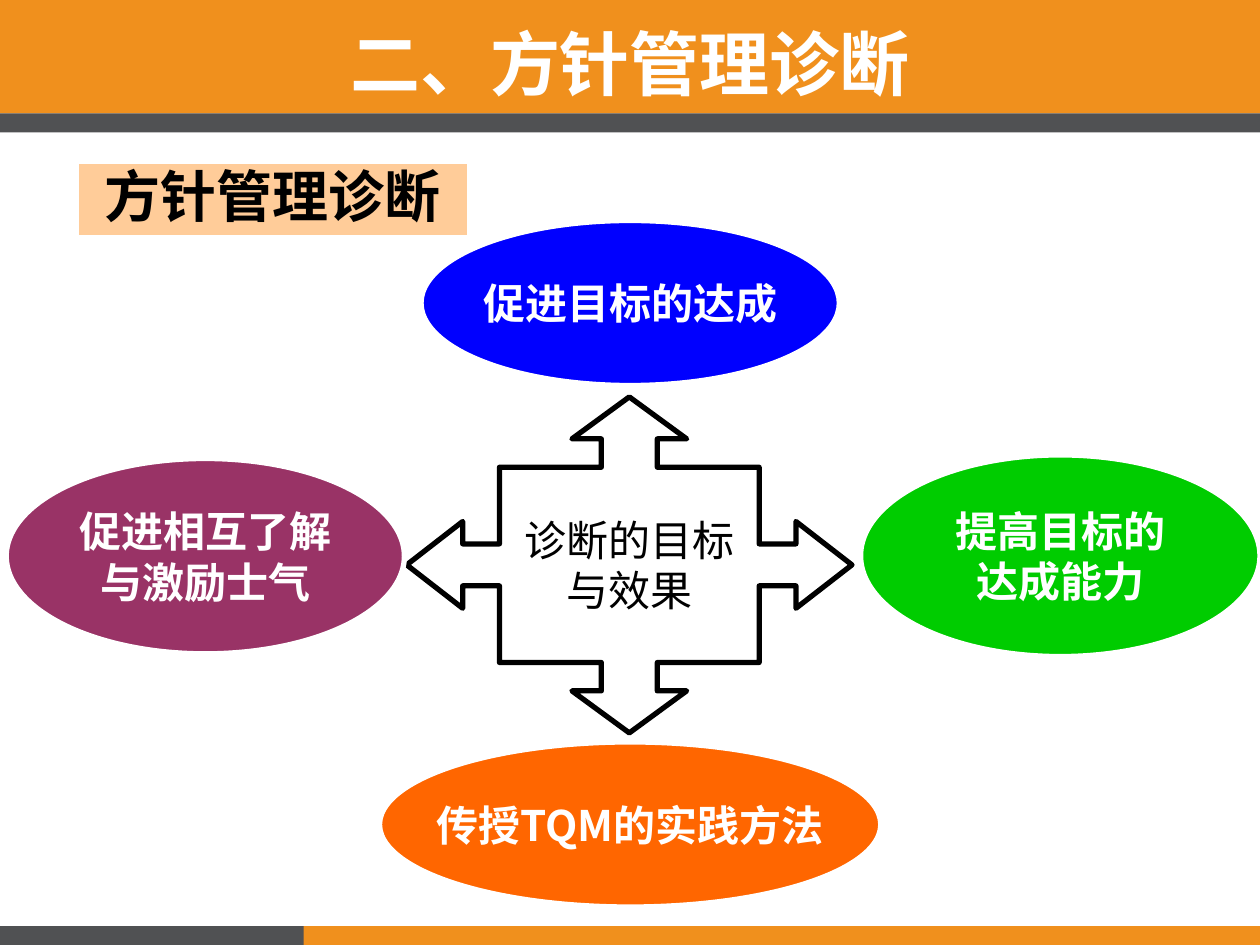
import pptx
import pptx.dml.color
import pptx.enum.shapes
import pptx.enum.text
import pptx.oxml.ns
import pptx.util
from dataclasses import dataclass
from lxml import etree

Pt = pptx.util.Pt
SHAPE = pptx.enum.shapes.MSO_SHAPE
ANCHOR = pptx.enum.text.MSO_ANCHOR
CENTER = pptx.enum.text.PP_ALIGN.CENTER


@dataclass(frozen=True)
class Theme:
    font: str = "Noto Sans CJK SC"
    title: int = 40
    heading: int = 32
    body: int = 24
    white: str = "FFFFFF"
    black: str = "000000"
    orange: str = "F0901D"
    gray: str = "505153"
    peach: str = "FFCC99"
    blue: str = "0000FF"
    green: str = "00CC00"
    flame: str = "FF6600"
    plum: str = "993366"


def rgb(value):
    return pptx.dml.color.RGBColor.from_string(value)


class SlideBuilder:
    def __init__(self, prs, theme):
        self.theme = theme
        self.s = prs.slides.add_slide(prs.slide_layouts[6])

    def paint(self, sp, fill, line=None, width=3):
        sp.shadow.inherit = False
        sp.fill.solid()
        sp.fill.fore_color.rgb = rgb(fill)
        if line:
            sp.line.color.rgb = rgb(line)
            sp.line.width = Pt(width)
        else:
            sp.line.fill.background()

    def add_text(self, sp, lines, size, color, bold=True, wrap=False,
                 anchor=ANCHOR.MIDDLE, spacing=None):
        tf = sp.text_frame
        tf.word_wrap = wrap
        tf.vertical_anchor = anchor
        style = {"size": Pt(size), "bold": bold, "name": self.theme.font}
        for i, text in enumerate(lines):
            p = tf.paragraphs[0] if i == 0 else tf.add_paragraph()
            p.alignment = CENTER
            p.line_spacing = spacing
            r = p.add_run()
            r.text = text
            for name, value in style.items():
                setattr(r.font, name, value)
            r.font.color.rgb = rgb(color)
            # East Asian glyphs take their typeface from a:ea
            ea = etree.SubElement(r.font._element, pptx.oxml.ns.qn("a:ea"))
            ea.set("typeface", self.theme.font)

    def bar(self, box, fill):
        sp = self.s.shapes.add_shape(SHAPE.RECTANGLE, *map(Pt, box))
        self.paint(sp, fill)

    def ellipse(self, box, fill, lines):
        sp = self.s.shapes.add_shape(SHAPE.OVAL, *map(Pt, box))
        self.paint(sp, fill, self.theme.white)
        self.add_text(sp, lines, self.theme.body, self.theme.white)

    def heading(self, box, text):
        sp = self.s.shapes.add_shape(SHAPE.RECTANGLE, *map(Pt, box))
        self.paint(sp, self.theme.peach, self.theme.white, 2.25)
        self.add_text(sp, [text], self.theme.heading, self.theme.black,
                      wrap=True, anchor=ANCHOR.TOP, spacing=0.9)

    def title(self, box, text):
        sp = self.s.shapes.add_textbox(*map(Pt, box))
        self.add_text(sp, [text], self.theme.title, self.theme.white,
                      wrap=True, anchor=ANCHOR.TOP)

    def four_way_arrow(self, cx, cy, quarter, lines):
        """Mirror the top-right quarter (top tip to right tip) about both axes."""
        right = quarter + [(x, -y) for x, y in quarter[-2::-1]]
        outline = right + [(-x, y) for x, y in right[-2:0:-1]]
        points = [(Pt(cx + x), Pt(cy + y)) for x, y in outline]
        builder = self.s.shapes.build_freeform(*points[0], scale=1.0)
        builder.add_line_segments(points[1:], close=True)
        sp = builder.convert_to_shape()
        self.paint(sp, self.theme.white, self.theme.black)
        self.add_text(sp, lines, self.theme.body, self.theme.black, bold=False)


def main():
    prs = pptx.Presentation()
    prs.slide_width, prs.slide_height = Pt(720), Pt(540)
    theme = Theme()
    b = SlideBuilder(prs, theme)

    b.bar((0, 0, 720, 64.8), theme.orange)
    b.bar((0, 64.8, 720, 10.8), theme.gray)
    b.bar((140.4, 529.2, 579.6, 10.8), theme.orange)
    b.bar((0, 529.2, 173.6, 10.8), theme.gray)

    quarter = [(0, -96), (32.8, -72), (16, -72), (16, -55.8), (74.2, -55.8),
               (74.2, -12), (95.2, -12), (95.2, -24.8), (127.2, 0)]
    b.four_way_arrow(359.6, 322.8, quarter, ["诊断的目标", "与效果"])

    effects = [
        ((491.8, 260, 228.2, 115.2), theme.green, ["提高目标的", "达成能力"]),
        ((216.9, 424, 286.4, 94.3), theme.flame, ["传授TQM的实践方法"]),
        ((3.6, 262, 227.5, 111.6), theme.plum, ["促进相互了解", "与激励士气"]),
        ((240.6, 126, 239, 94.3), theme.blue, ["促进目标的达成"]),
    ]
    for effect in effects:
        b.ellipse(*effect)

    b.heading((44, 92.8, 223.9, 42.5), "方针管理诊断")
    b.title((0, 8, 720, 55.4), "二、方针管理诊断")
    prs.save("out.pptx")


if __name__ == "__main__":
    main()
